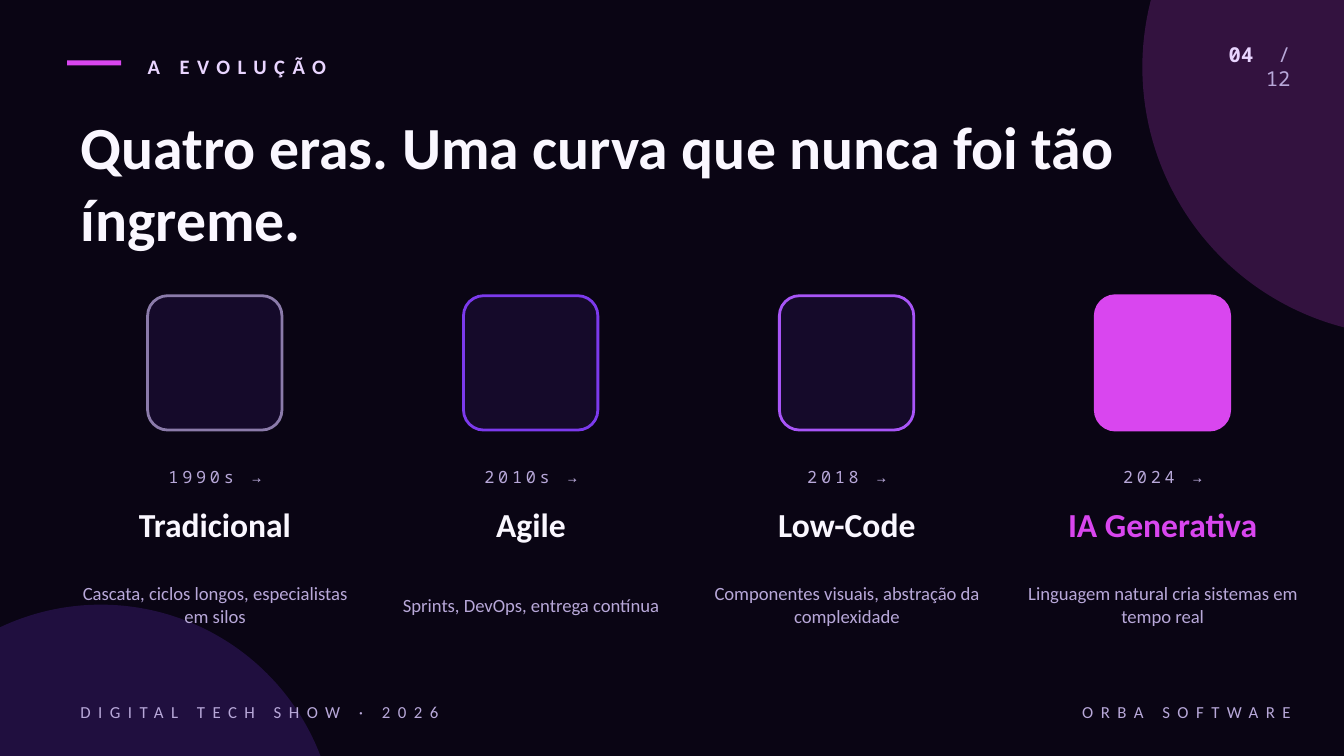
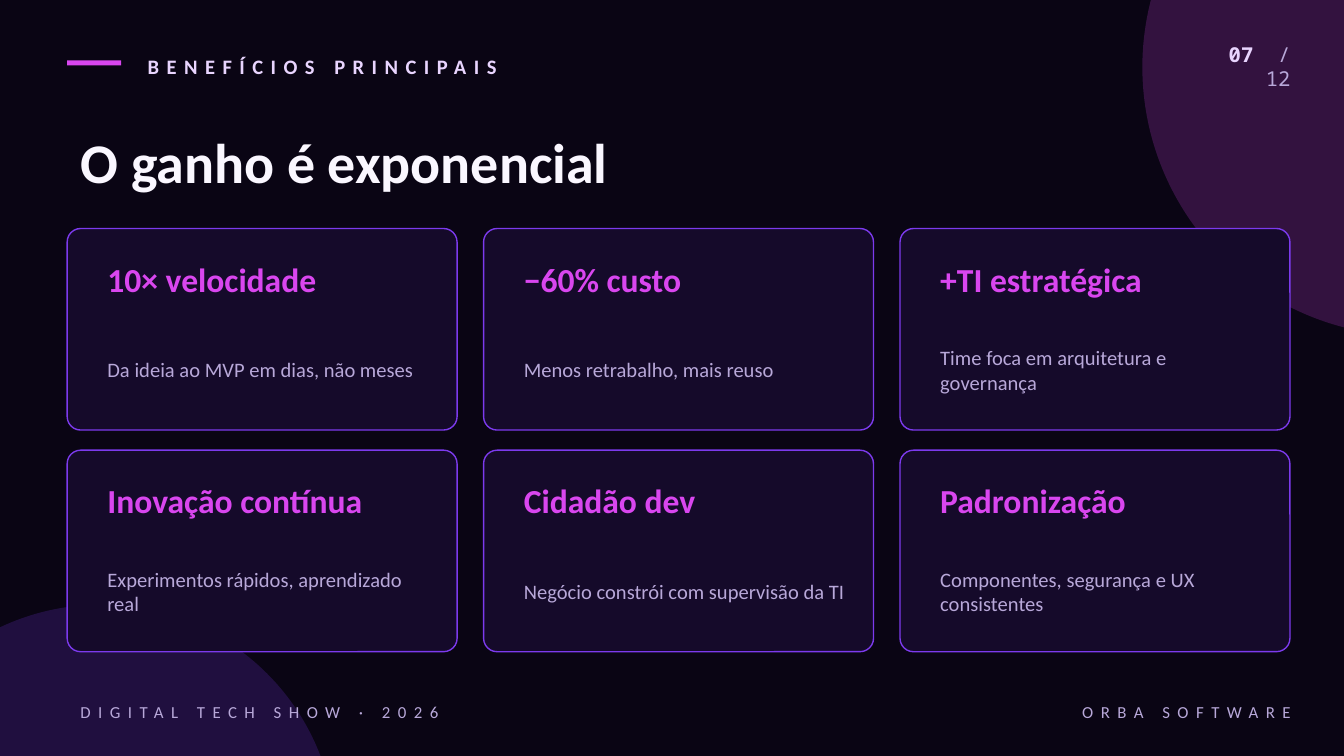
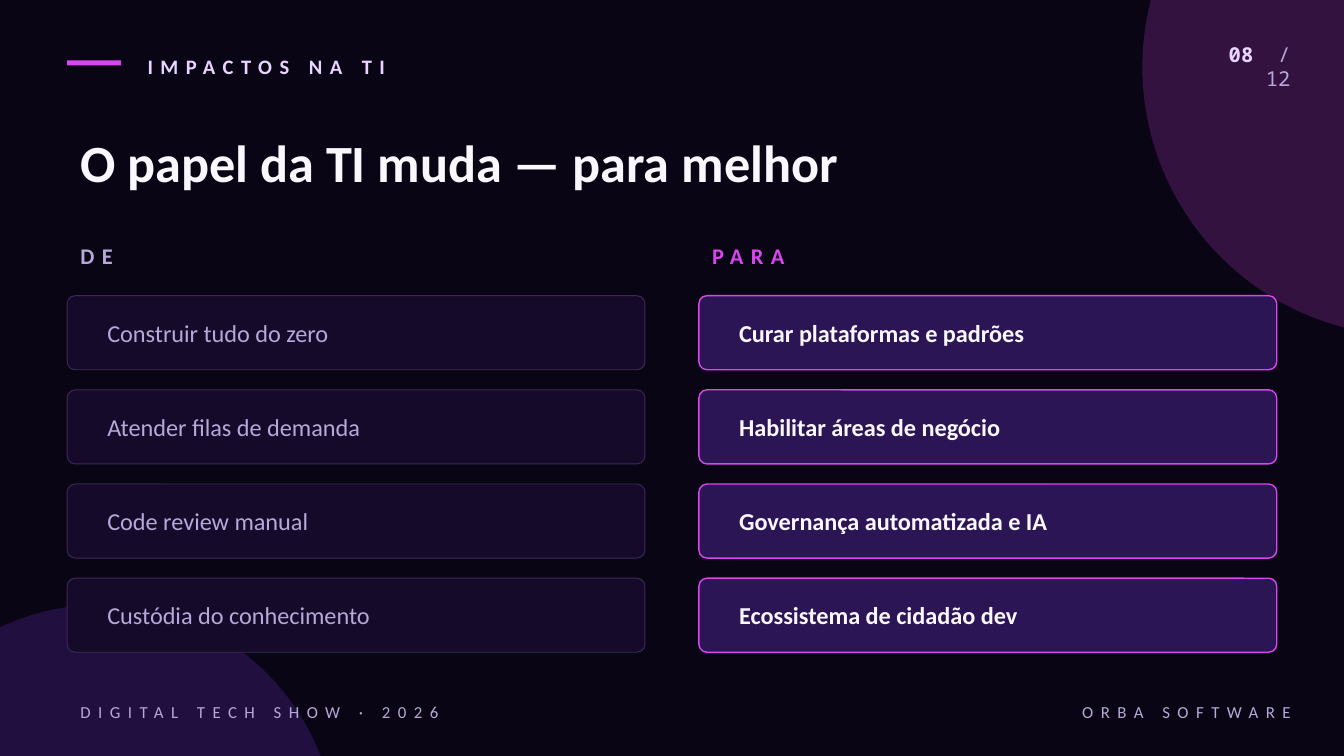
from dataclasses import dataclass

from lxml import etree
from pptx import Presentation
from pptx.dml.color import RGBColor
from pptx.enum.shapes import MSO_SHAPE
from pptx.enum.text import MSO_ANCHOR, MSO_AUTO_SIZE, PP_ALIGN
from pptx.oxml.ns import qn
from pptx.util import Cm, Pt

OVAL = MSO_SHAPE.OVAL
RECT = MSO_SHAPE.RECTANGLE
ROUND = MSO_SHAPE.ROUNDED_RECTANGLE
MIDDLE = MSO_ANCHOR.MIDDLE
FIXED = MSO_AUTO_SIZE.NONE
LEFT, CENTER, RIGHT = PP_ALIGN.LEFT, PP_ALIGN.CENTER, PP_ALIGN.RIGHT

SANS = "Calibri"
MONO = "Noto Sans Mono"
HUES = {
    "night": "0A0514",
    "panel": "150A2A",
    "edge": "3A2A55",
    "gray": "8B7BAA",
    "violet": "7C3AED",
    "purple": "A855F7",
    "pink": "D946EF",
    "lilac": "E9D5FF",
    "muted": "B8A8D9",
    "white": "FAF7FF",
}
MARGIN = 1.27
INSET = 0.51


@dataclass(frozen=True)
class Box:
    left: float
    top: float
    width: float
    height: float

    def lengths(self) -> tuple:
        return Cm(self.left), Cm(self.top), Cm(self.width), Cm(self.height)


@dataclass(frozen=True)
class Era:
    date: str
    name: str
    note: str
    line: str
    fill: str = "panel"
    ink: str = "white"


@dataclass(frozen=True)
class Card:
    head: str
    note: str


@dataclass(frozen=True)
class Column:
    left: float
    head: str
    items: tuple
    tint: str
    ink: str
    fill: str
    line: str
    weight: float
    alpha: int = 100
    bold: bool = False


ERAS = (
    Era("1990s →", "Tradicional", "Cascata, ciclos longos, especialistas em silos", "gray"),
    Era("2010s →", "Agile", "Sprints, DevOps, entrega contínua", "violet"),
    Era("2018 →", "Low-Code", "Componentes visuais, abstração da complexidade", "purple"),
    Era("2024 →", "IA Generativa", "Linguagem natural cria sistemas em tempo real",
        "pink", "pink", "pink"),
)
CARDS = (
    Card("10× velocidade", "Da ideia ao MVP em dias, não meses"),
    Card("−60% custo", "Menos retrabalho, mais reuso"),
    Card("+TI estratégica", "Time foca em arquitetura e governança"),
    Card("Inovação contínua", "Experimentos rápidos, aprendizado real"),
    Card("Cidadão dev", "Negócio constrói com supervisão da TI"),
    Card("Padronização", "Componentes, segurança e UX consistentes"),
)
COLUMNS = (
    Column(MARGIN, "DE",
           ("Construir tudo do zero", "Atender filas de demanda",
            "Code review manual", "Custódia do conhecimento"),
           "muted", "muted", "panel", "edge", 0.5),
    Column(13.21, "PARA",
           ("Curar plataformas e padrões", "Habilitar áreas de negócio",
            "Governança automatizada e IA", "Ecossistema de cidadão dev"),
           "pink", "white", "violet", "pink", 0.75, alpha=30, bold=True),
)


def color(name: str) -> RGBColor:
    return RGBColor.from_string(HUES[name])


def write(frame, text: str, *, size: float, ink: str = "muted", bold: bool = False,
          face: str = SANS, track: float = 0, align=LEFT) -> None:
    frame.word_wrap = True
    frame.auto_size = FIXED
    frame.vertical_anchor = MIDDLE
    para = frame.paragraphs[0]
    para.alignment = align
    run = para.add_run()
    run.text = text
    font = run.font
    font.name, font.size, font.bold = face, Pt(size), bold
    font.color.rgb = color(ink)
    if track:
        run._r.get_or_add_rPr().set("spc", str(round(track * 100)))


def label(slide, box: Box, text: str, **style):
    frame = slide.shapes.add_textbox(*box.lengths()).text_frame
    write(frame, text, **style)
    return frame


def draw(slide, kind, box: Box, fill: str, *, line: str = "", weight: float = 0,
         alpha: int = 100, bend: float = 0) -> None:
    shape = slide.shapes.add_shape(kind, *box.lengths())
    shape.shadow.inherit = False
    shape.fill.solid()
    shape.fill.fore_color.rgb = color(fill)
    if alpha < 100:
        tone = shape._element.spPr.find(qn("a:solidFill")).find(qn("a:srgbClr"))
        etree.SubElement(tone, qn("a:alpha")).set("val", str(alpha * 1000))
    if line:
        shape.line.color.rgb = color(line)
        shape.line.width = Pt(weight)
    else:
        shape.line.fill.background()
    if bend:
        shape.adjustments[0] = bend


def start(deck, topic: str, page: str, title: str, size: float, height: float = 1.52):
    slide = deck.slides.add_slide(deck.slide_layouts[5])
    back = slide.background.fill
    back.solid()
    back.fore_color.rgb = color("night")
    draw(slide, OVAL, Box(21.59, -3.81, 10.16, 10.16), "pink", alpha=20)
    draw(slide, OVAL, Box(-2.54, 11.43, 8.89, 8.89), "violet", alpha=20)
    draw(slide, RECT, Box(MARGIN, 1.14, 1.02, 0.1), "pink")
    label(slide, Box(2.54, 0.81, 15.24, 0.89), topic,
          size=11, ink="lilac", bold=True, track=4)

    count = {"size": 11, "face": MONO, "align": RIGHT}
    frame = label(slide, Box(22.1, 0.81, 2.54, 0.89), page, ink="lilac", bold=True, **count)
    for mark in ("/", "12"):
        write(frame, " ", track=6.6, **count)
        write(frame, mark, **count)

    foot = {"size": 9, "track": 4}
    label(slide, Box(MARGIN, 13.08, 10.16, 0.76), "DIGITAL TECH SHOW · 2026", **foot)
    label(slide, Box(13.97, 13.08, 10.67, 0.76), "ORBA SOFTWARE", align=RIGHT, **foot)

    head = slide.shapes.title
    head.left, head.top, head.width, head.height = Box(MARGIN, 2.29, 22.86, height).lengths()
    write(head.text_frame, title, size=size, ink="white", bold=True)
    return slide


def show_eras(deck) -> None:
    slide = start(deck, "A EVOLUÇÃO", "04",
                  "Quatro eras. Uma curva que nunca foi tão íngreme.", 32, 2.29)
    width = 5.59
    for i, era in enumerate(ERAS):
        left = MARGIN + i * 5.97
        draw(slide, ROUND, Box(left + 1.52, 5.59, 2.54, 2.54), era.fill,
             line=era.line, weight=1.5, bend=0.15)
        label(slide, Box(left, 8.64, width, 0.76), era.date,
              size=9, face=MONO, track=2, align=CENTER)
        label(slide, Box(left, 9.4, width, 1.02), era.name,
              size=18, ink=era.ink, bold=True, align=CENTER)
        label(slide, Box(left, 10.54, width, 1.78), era.note, size=10, align=CENTER)


def show_gains(deck) -> None:
    slide = start(deck, "BENEFÍCIOS PRINCIPAIS", "07", "O ganho é exponencial", 30)
    for i, card in enumerate(CARDS):
        row, col = divmod(i, 3)
        left, top = MARGIN + col * 7.87, 4.32 + row * 4.19
        draw(slide, ROUND, Box(left, top, 7.37, 3.81), "panel",
             line="violet", weight=0.75, bend=0.067)
        label(slide, Box(left + INSET, top + 0.38, 6.6, 1.14), card.head,
              size=18, ink="pink", bold=True)
        label(slide, Box(left + INSET, top + 1.65, 6.6, 2.03), card.note, size=11)


def show_shift(deck) -> None:
    slide = start(deck, "IMPACTOS NA TI", "08", "O papel da TI muda — para melhor", 28)
    width = 10.92
    for col in COLUMNS:
        label(slide, Box(col.left, 4.32, width, 1.02), col.head,
              size=12, ink=col.tint, bold=True, track=4)
        for i, item in enumerate(col.items):
            top = 5.59 + i * 1.78
            draw(slide, ROUND, Box(col.left, top, width, 1.4), col.fill, line=col.line,
                 weight=col.weight, alpha=col.alpha, bend=0.109)
            label(slide, Box(col.left + INSET, top + 0.13, 10.16, 1.14), item,
                  size=13, ink=col.ink, bold=col.bold)


def main() -> None:
    deck = Presentation()
    deck.slide_width, deck.slide_height = Cm(25.4), Cm(14.29)
    show_eras(deck)
    show_gains(deck)
    show_shift(deck)
    deck.save("out.pptx")


if __name__ == "__main__":
    main()
